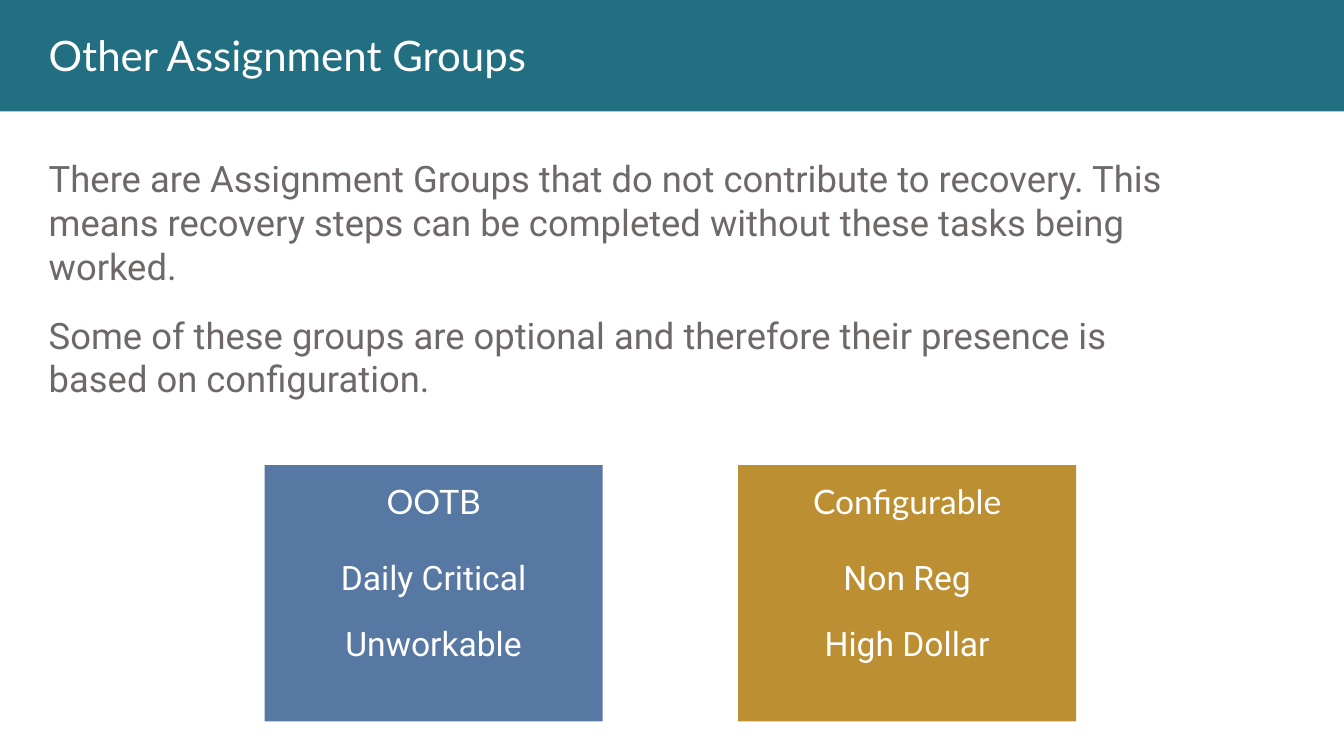
from dataclasses import dataclass

from pptx import Presentation
from pptx import util as u
from pptx.dml.color import RGBColor
from pptx.enum import shapes, text

PX = u.Inches(1) // 96


@dataclass(frozen=True)
class Theme:
    teal: str = "216F81"
    blue: str = "5778A3"
    gold: str = "BD8F33"
    grey: str = "6F6868"
    white: str = "FFFFFF"
    heading_font: str = "Lato"
    body_font: str = "Roboto"
    title_size: int = 30
    body_size: int = 26
    card_size: int = 24
    para_gap: int = 18


THEME = Theme()


def add_panel(page, box, color):
    left, top, width, height = (n * PX for n in box)
    panel = page.shapes.add_shape(shapes.MSO_SHAPE.RECTANGLE, left, top, width, height)
    panel.shadow.inherit = False
    panel.fill.solid()
    panel.fill.fore_color.rgb = RGBColor.from_string(color)
    panel.line.fill.background()


def add_text(page, box, lines, font, size, color, align=text.PP_ALIGN.LEFT,
             anchor=text.MSO_ANCHOR.MIDDLE):
    """Write one paragraph per line, with the theme's gap between them."""
    left, top, width, height = (n * PX for n in box)
    frame = page.shapes.add_textbox(left, top, width, height).text_frame
    frame.word_wrap = True
    frame.vertical_anchor = anchor
    frame.text = "\n".join(lines)
    for para in frame.paragraphs:
        para.alignment = align
        if len(lines) > 1:
            para.space_after = u.Pt(THEME.para_gap)
        for span in para.runs:
            span.font.name = font
            span.font.size = u.Pt(size)
            span.font.color.rgb = RGBColor.from_string(color)


def add_title_band(page, box, title):
    left, top, width, height = box
    add_panel(page, box, THEME.teal)
    add_text(page, (left + 37, top + 23, 1104, 60), [title], THEME.heading_font,
             THEME.title_size, THEME.white, anchor=text.MSO_ANCHOR.TOP)


def add_card(page, box, color, heading, groups):
    left, top, width, height = box
    center = text.PP_ALIGN.CENTER
    add_panel(page, box, color)
    add_text(page, (left + 42, top + 10, width - 84, 48), [heading],
             THEME.heading_font, THEME.card_size, THEME.white, center)
    add_text(page, (left + 58, top + 82, width - 116, 112), groups,
             THEME.body_font, THEME.card_size, THEME.white, center)


def add_groups_slide(deck):
    page = deck.slides.add_slide(deck.slide_layouts[6])
    add_title_band(page, (0, 0, 1280, 106), "Other Assignment Groups")
    add_text(page, (37, 143, 1090, 244), [
        "There are Assignment Groups that do not contribute to recovery. This means "
        "recovery steps can be completed without these tasks being worked.",
        "Some of these groups are optional and therefore their presence is based on "
        "configuration.",
    ], THEME.body_font, THEME.body_size, THEME.grey)

    cards = [
        (THEME.blue, "OOTB", ["Daily Critical", "Unworkable"]),
        (THEME.gold, "Configurable", ["Non Reg", "High Dollar"]),
    ]
    card_width, card_gap = 322, 129
    for index, (color, heading, groups) in enumerate(cards):
        left = 252 + index * (card_width + card_gap)
        add_card(page, (left, 443, card_width, 244), color, heading, groups)


def main():
    deck = Presentation()
    deck.slide_width, deck.slide_height = 1280 * PX, 720 * PX
    add_groups_slide(deck)
    deck.save("out.pptx")


if __name__ == "__main__":
    main()
